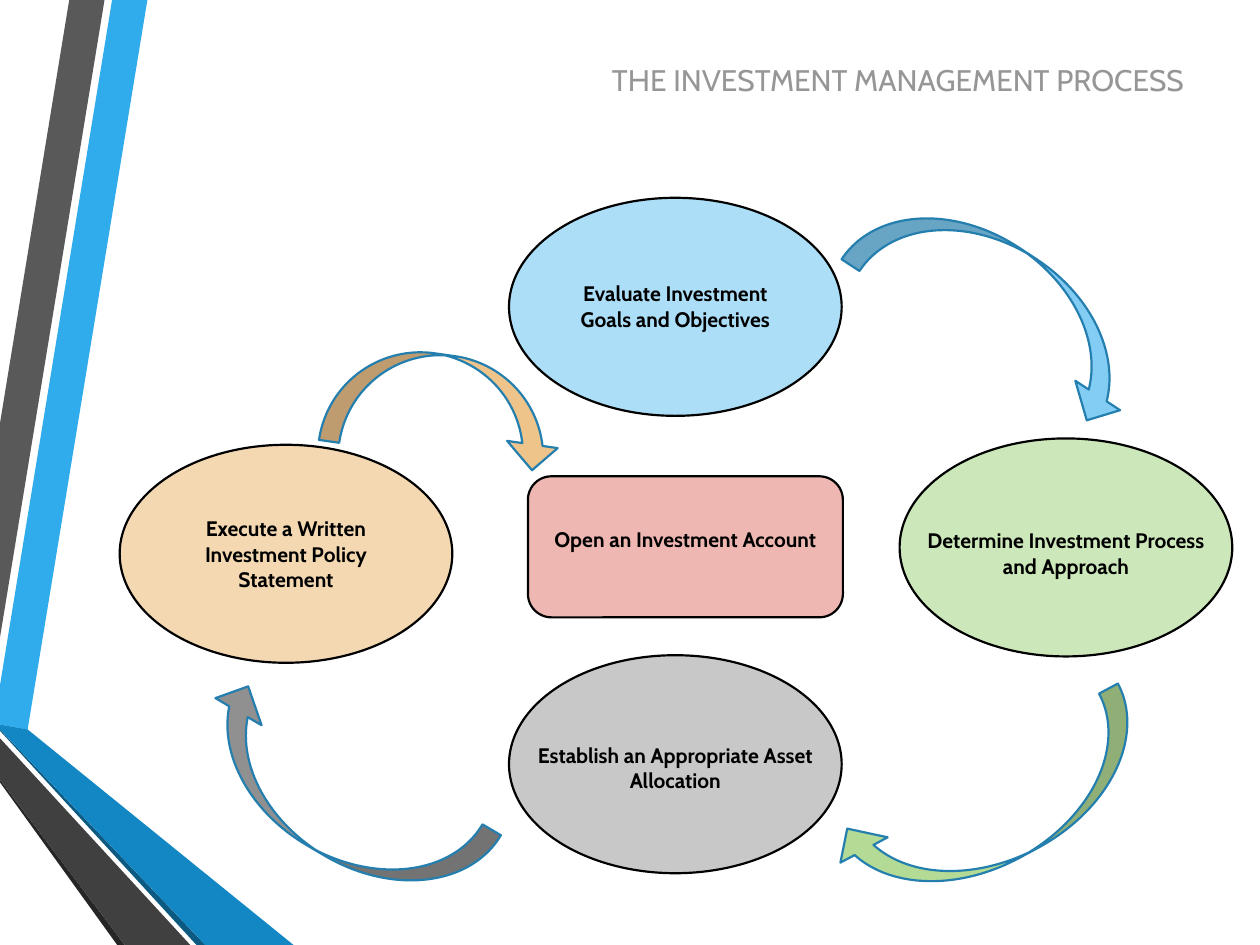
from dataclasses import dataclass

from pptx import Presentation
from pptx.dml.color import RGBColor
from pptx.enum.shapes import MSO_SHAPE
from pptx.enum.text import MSO_ANCHOR, PP_ALIGN
from pptx.util import Inches, Pt

OVAL = MSO_SHAPE.OVAL
ROUNDED = MSO_SHAPE.ROUNDED_RECTANGLE
CURVED_ARROW = MSO_SHAPE.CURVED_LEFT_ARROW
MIDDLE = MSO_ANCHOR.MIDDLE
CENTER, RIGHT = PP_ALIGN.CENTER, PP_ALIGN.RIGHT

FONT = "Cabin"
BLACK = RGBColor(0x00, 0x00, 0x00)
TITLE_GRAY = RGBColor(0x96, 0x96, 0x96)
ARROW_EDGE = RGBColor(0x24, 0x7F, 0xAF)
SKY = RGBColor(0x30, 0xAC, 0xEC)
SLATE = RGBColor(0x59, 0x59, 0x59)
INK = RGBColor(0x26, 0x26, 0x26)
NAVY = RGBColor(0x0C, 0x5A, 0x82)
BLUE = RGBColor(0x12, 0x87, 0xC3)
CHARCOAL = RGBColor(0x40, 0x40, 0x40)
PALE_BLUE = RGBColor(0xAC, 0xDE, 0xF7)
PALE_GREEN = RGBColor(0xCC, 0xE7, 0xB9)
PALE_GRAY = RGBColor(0xC8, 0xC8, 0xC8)
PALE_ORANGE = RGBColor(0xF3, 0xD8, 0xB2)
PALE_RED = RGBColor(0xEF, 0xB7, 0xB1)
ARROW_BLUE = RGBColor(0x83, 0xCD, 0xF4)
ARROW_GREEN = RGBColor(0xB3, 0xDB, 0x95)
ARROW_GRAY = RGBColor(0x90, 0x90, 0x90)
ARROW_ORANGE = RGBColor(0xEE, 0xC4, 0x8B)

SLIDE_W, SLIDE_H = Inches(10), Inches(7.5)


# All positions and sizes are percentages of the slide's width or height.
@dataclass(frozen=True)
class Band:
    color: RGBColor
    points: tuple


@dataclass(frozen=True)
class Step:
    lines: tuple
    cx: float
    cy: float
    label_cy: float
    color: RGBColor
    kind: int = OVAL
    width: float = 26.4
    height: float = 23.07


@dataclass(frozen=True)
class Arrow:
    cx: float
    cy: float
    width: float
    height: float
    rotation: float
    color: RGBColor


BANDS = (
    Band(SKY, ((0, 72.53), (0, 76.67), (2.2, 77.2), (11.7, 0), (8.9, 0))),
    Band(SLATE, ((8.3, 0), (5.5, 0), (0, 44.8), (0, 67.47))),
    Band(INK, ((0, 82.53), (0, 82.8), (9.3, 100), (9.9, 100))),
    Band(NAVY, ((0, 77.2), (0, 77.33), (15.6, 100), (16.3, 100))),
    Band(BLUE, ((0, 77.2), (16.3, 100), (23.3, 100), (2.2, 77.2), (0, 76.67))),
    Band(CHARCOAL, ((0, 82.53), (9.9, 100), (15.1, 100), (0, 78.13))),
)
CYCLE = (
    Step(("Evaluate Investment", "Goals and Objectives"),
         53.6, 32.47, 32.4, PALE_BLUE),
    Step(("Determine Investment Process", "and Approach"),
         84.6, 57.93, 58.53, PALE_GREEN),
    Step(("Establish an Appropriate Asset", "Allocation"),
         53.6, 80.87, 81.2, PALE_GRAY),
    Step(("Execute a Written", "Investment Policy", "Statement"),
         22.7, 58.6, 58.6, PALE_ORANGE),
)
ARROWS = (
    Arrow(79.75, 32, 8.5, 33.87, 303.3, ARROW_BLUE),
    Arrow(79.05, 85.67, 8.5, 35.33, 61.8, ARROW_GREEN),
    Arrow(26.65, 84.67, 8.5, 33.87, 120.5, ARROW_GRAY),
    Arrow(35.35, 43, 8.1, 25.47, 278.1, ARROW_ORANGE),
)
ACCOUNT = Step(("Open an Investment Account",), 54.4, 57.87, 57.07,
               PALE_RED, ROUNDED, 25, 14.93)


def across(share: float) -> int:
    return round(SLIDE_W * share / 100)


def down(share: float) -> int:
    return round(SLIDE_H * share / 100)


def centered(cx: float, cy: float, width: float, height: float) -> tuple:
    """Left, top, width and height of a box around a centre."""
    return (across(cx - width / 2), down(cy - height / 2),
            across(width), down(height))


def paint(sp, fill: RGBColor, edge: RGBColor | None = None) -> None:
    sp.shadow.inherit = False
    sp.fill.solid()
    sp.fill.fore_color.rgb = fill
    if edge is None:
        sp.line.fill.background()
    else:
        sp.line.color.rgb = edge
        sp.line.width = Pt(1.25)


def write(tf, text: str, size: float, color: RGBColor, align: int,
          bold: bool = False) -> None:
    tf.text = text
    tf.word_wrap = True
    tf.vertical_anchor = MIDDLE
    for p in tf.paragraphs:
        p.alignment = align
        for r in p.runs:
            r.font.name = FONT
            r.font.size = Pt(size)
            r.font.bold = bold
            r.font.color.rgb = color


def draw_band(shapes, band: Band) -> None:
    start, *rest = [(across(x), down(y)) for x, y in band.points]
    builder = shapes.build_freeform(*start)
    builder.add_line_segments(rest, close=True)
    paint(builder.convert_to_shape(), band.color)


def draw_step(shapes, step: Step) -> None:
    box = centered(step.cx, step.cy, step.width, step.height)
    paint(shapes.add_shape(step.kind, *box), step.color, BLACK)
    label_height = 1.2 + 2.75 * len(step.lines)
    label = shapes.add_textbox(
        *centered(step.cx, step.label_cy, step.width, label_height))
    write(label.text_frame, "\n".join(step.lines), 12, BLACK, CENTER, bold=True)


def draw_arrow(shapes, arrow: Arrow) -> None:
    sp = shapes.add_shape(
        CURVED_ARROW, *centered(arrow.cx, arrow.cy, arrow.width, arrow.height))
    sp.rotation = arrow.rotation
    sp.adjustments[0] = 0.2
    paint(sp, arrow.color, ARROW_EDGE)


def main() -> None:
    prs = Presentation()
    prs.slide_width, prs.slide_height = SLIDE_W, SLIDE_H
    s = prs.slides.add_slide(prs.slide_layouts.get_by_name("Title Only"))
    title = s.shapes.title
    title.left, title.top, title.width, title.height = (
        across(12.3), down(5.87), across(82.7), down(5.2))
    write(title.text_frame, "THE INVESTMENT MANAGEMENT PROCESS",
          17, TITLE_GRAY, RIGHT)
    for band in BANDS:
        draw_band(s.shapes, band)
    for step in CYCLE:
        draw_step(s.shapes, step)
    for arrow in ARROWS:
        draw_arrow(s.shapes, arrow)
    draw_step(s.shapes, ACCOUNT)
    prs.save("out.pptx")


if __name__ == "__main__":
    main()
